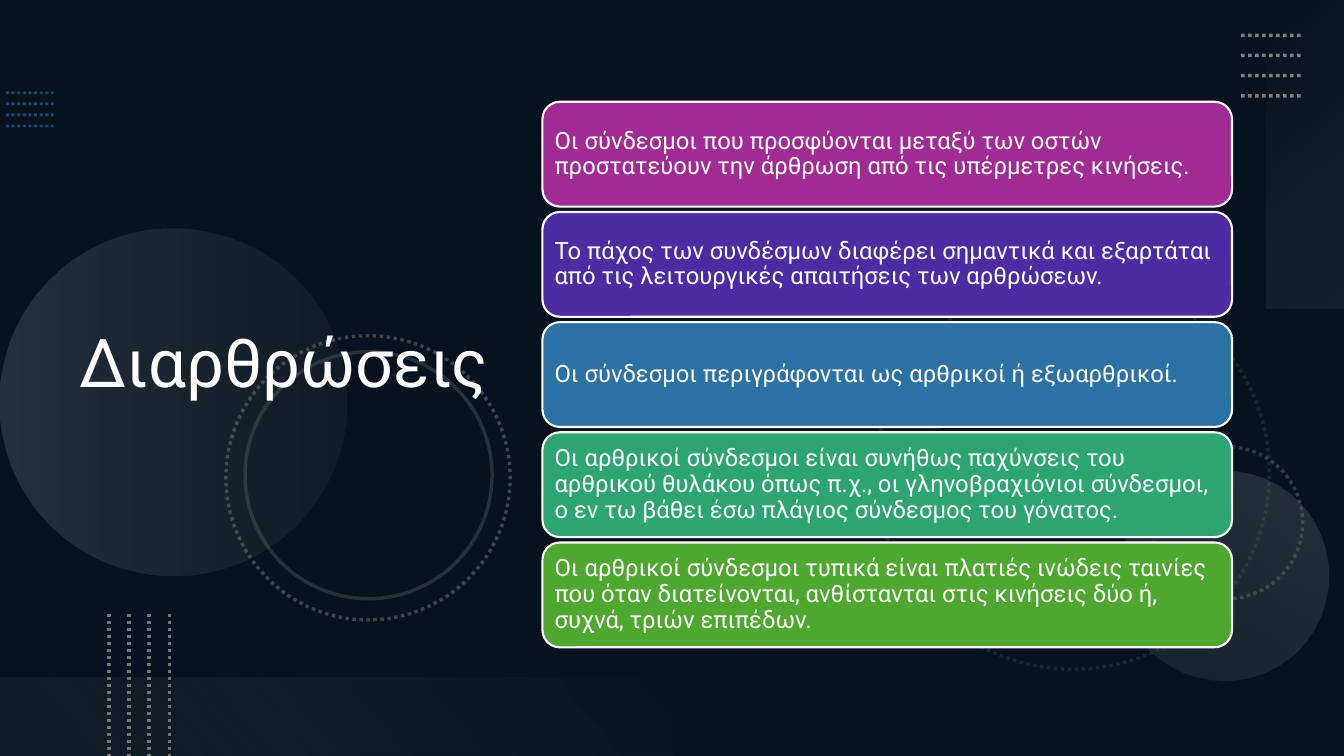
import pptx
import pptx.util
import pptx.dml.color
import pptx.enum.dml
import pptx.enum.shapes
import pptx.enum.text
import pptx.oxml
import pptx.oxml.ns
import lxml.etree

Inches = pptx.util.Inches
Pt = pptx.util.Pt
Color = pptx.dml.color.RGBColor.from_string
Shape = pptx.enum.shapes.MSO_SHAPE
qn = pptx.oxml.ns.qn

COLORS = {
    "navy": "0E2841", "black": "000000", "white": "FFFFFF", "blue": "2D7FCF",
    "gray": "747474", "silver": "AEAEAE", "pale": "F6F6F6", "mist": "F1F1F1",
    "purple": "A02B93", "violet": "4B2CA2", "azure": "2C71A4",
    "teal": "2DA573", "green": "4EA72E",
}


def style_line(item, color, width, opacity, dotted=True):
    item.line.color.rgb = Color(COLORS[color])
    item.line.width = Pt(width)
    if dotted:
        item.line.dash_style = pptx.enum.dml.MSO_LINE.ROUND_DOT
    for tone in item.line._get_or_add_ln().iter(qn("a:srgbClr")):
        lxml.etree.SubElement(tone, qn("a:alpha"), val=str(opacity * 1000))


def add_backdrop(kind, left, top, width, height, rotation, stops=(), angle=0):
    """Add a borderless shape; stops are (position, color, opacity)."""
    item = page.shapes.add_shape(kind, Inches(left), Inches(top), Inches(width), Inches(height))
    item.shadow.inherit = False
    item.rotation = rotation
    item.line.fill.background()
    item.fill.background()
    if stops:
        marks = "".join(
            f'<a:gs pos="{position * 1000}"><a:srgbClr val="{COLORS[color]}">'
            f'<a:alpha val="{opacity * 1000}"/></a:srgbClr></a:gs>'
            for position, color, opacity in stops)
        gradient = pptx.oxml.parse_xml(
            f'<a:gradFill {pptx.oxml.ns.nsdecls("a")} rotWithShape="1"><a:gsLst>{marks}</a:gsLst>'
            f'<a:lin ang="{angle * 60000}" scaled="0"/></a:gradFill>')
        properties = item._element.spPr
        properties.replace(properties.find(qn("a:noFill")), gradient)
    return item


deck = pptx.Presentation()
deck.slide_width = Inches(13.33)
deck.slide_height = Inches(7.5)
page = deck.slides.add_slide(deck.slide_layouts[6])

# Background with a dark veil
page.background.fill.solid()
page.background.fill.fore_color.rgb = Color(COLORS["navy"])
veil = [(0, "black", 53), (100, "black", 53)]
add_backdrop(Shape.RECTANGLE, 0, 0, 13.33, 7.5, 0, veil)

# Circles: left, top, diameter, rotation, gradient stops
discs = [
    (0, 2.27, 3.44, 270, [(0, "silver", 20), (100, "gray", 10)]),
    (11.1, 4.67, 2.08, 210, [(0, "silver", 10), (100, "silver", 20)]),
]
for left, top, size, rotation, stops in discs:
    add_backdrop(Shape.OVAL, left, top, size, size, rotation, stops, 90)

# Rings: left, top, diameter, rotation, opacity, dotted
rings = [
    (8.69, 2.74, 3.9, 75, 20, True),
    (11.41, 4.43, 1.51, 270, 40, True),
    (2.24, 3.33, 2.82, 75, 50, True),
    (2.43, 3.49, 2.45, 75, 30, False),
]
for left, top, size, rotation, opacity, dotted in rings:
    ring = add_backdrop(Shape.OVAL, left, top, size, size, rotation)
    style_line(ring, "gray", 2.5, opacity, dotted)

# Corner bands
add_backdrop(Shape.RECTANGLE, 11.42, 1.14, 3.06, 0.78, 270,
             [(0, "pale", 0), (100, "silver", 10)], 140)
add_backdrop(Shape.RECTANGLE, 0, 6.72, 6.67, 0.78, 180,
             [(10, "gray", 10), (100, "mist", 0)], 140)

# Dotted line groups: start, length (x, y), step (x, y), color, width, opacity
dot_groups = [
    ((0.06, 0.92), (0.47, 0), (0, 0.11), "blue", 2, 50),
    ((12.31, 0.35), (0.6, 0), (0, 0.2), "silver", 2.5, 70),
    ((1.08, 6.09), (0, 1.41), (0.2, 0), "gray", 2.5, 100),
]
for (x, y), (run, drop), (step_x, step_y), color, width, opacity in dot_groups:
    for index in range(4):
        left, top = x + index * step_x, y + index * step_y
        dots = page.shapes.add_connector(
            pptx.enum.shapes.MSO_CONNECTOR.STRAIGHT,
            Inches(left), Inches(top), Inches(left + run), Inches(top + drop))
        style_line(dots, color, width, opacity)
        lxml.etree.SubElement(dots._element.spPr, qn("a:effectLst"))

# Title and cards
title = page.shapes.add_textbox(Inches(0.69), Inches(0.54), Inches(4.59), Inches(6.17))
texts = [(title, "Διαρθρώσεις", 48, 0.1)]

cards = [
    ("purple", "Οι σύνδεσμοι που προσφύονται μεταξύ των οστών προστατεύουν την άρθρωση "
               "από τις υπέρμετρες κινήσεις."),
    ("violet", "Το πάχος των συνδέσμων διαφέρει σημαντικά και εξαρτάται από τις "
               "λειτουργικές απαιτήσεις των αρθρώσεων."),
    ("azure", "Οι σύνδεσμοι περιγράφονται ως αρθρικοί ή εξωαρθρικοί."),
    ("teal", "Οι αρθρικοί σύνδεσμοι είναι συνήθως παχύνσεις του αρθρικού θυλάκου όπως "
             "π.χ., οι γληνοβραχιόνιοι σύνδεσμοι, ο εν τω βάθει έσω πλάγιος σύνδεσμος "
             "του γόνατος."),
    ("green", "Οι αρθρικοί σύνδεσμοι τυπικά είναι πλατιές ινώδεις ταινίες που όταν "
              "διατείνονται, ανθίστανται στις κινήσεις δύο ή, συχνά, τριών επιπέδων."),
]
for index, (color, text) in enumerate(cards):
    card = add_backdrop(Shape.ROUNDED_RECTANGLE, 5.38, 1.01 + index * 1.093, 6.84, 1.04, 0)
    card.fill.solid()
    card.fill.fore_color.rgb = Color(COLORS[color])
    style_line(card, "white", 1.5, 100, False)
    texts.append((card, text, 17, 0.07))

# Text formatting
for box, text, size, inset in texts:
    frame = box.text_frame
    frame_format = {
        "word_wrap": True, "vertical_anchor": pptx.enum.text.MSO_ANCHOR.MIDDLE,
        "margin_left": Inches(inset), "margin_right": Inches(inset),
        "margin_top": Inches(0.05), "margin_bottom": Inches(0.05),
    }
    for name, value in frame_format.items():
        setattr(frame, name, value)
    para = frame.paragraphs[0]
    para.alignment = pptx.enum.text.PP_ALIGN.LEFT
    para.line_spacing = 0.9
    span = para.add_run()
    span.text = text
    for name, value in {"name": "Roboto", "size": Pt(size)}.items():
        setattr(span.font, name, value)
    span.font.color.rgb = Color(COLORS["white"])

deck.save("out.pptx")
